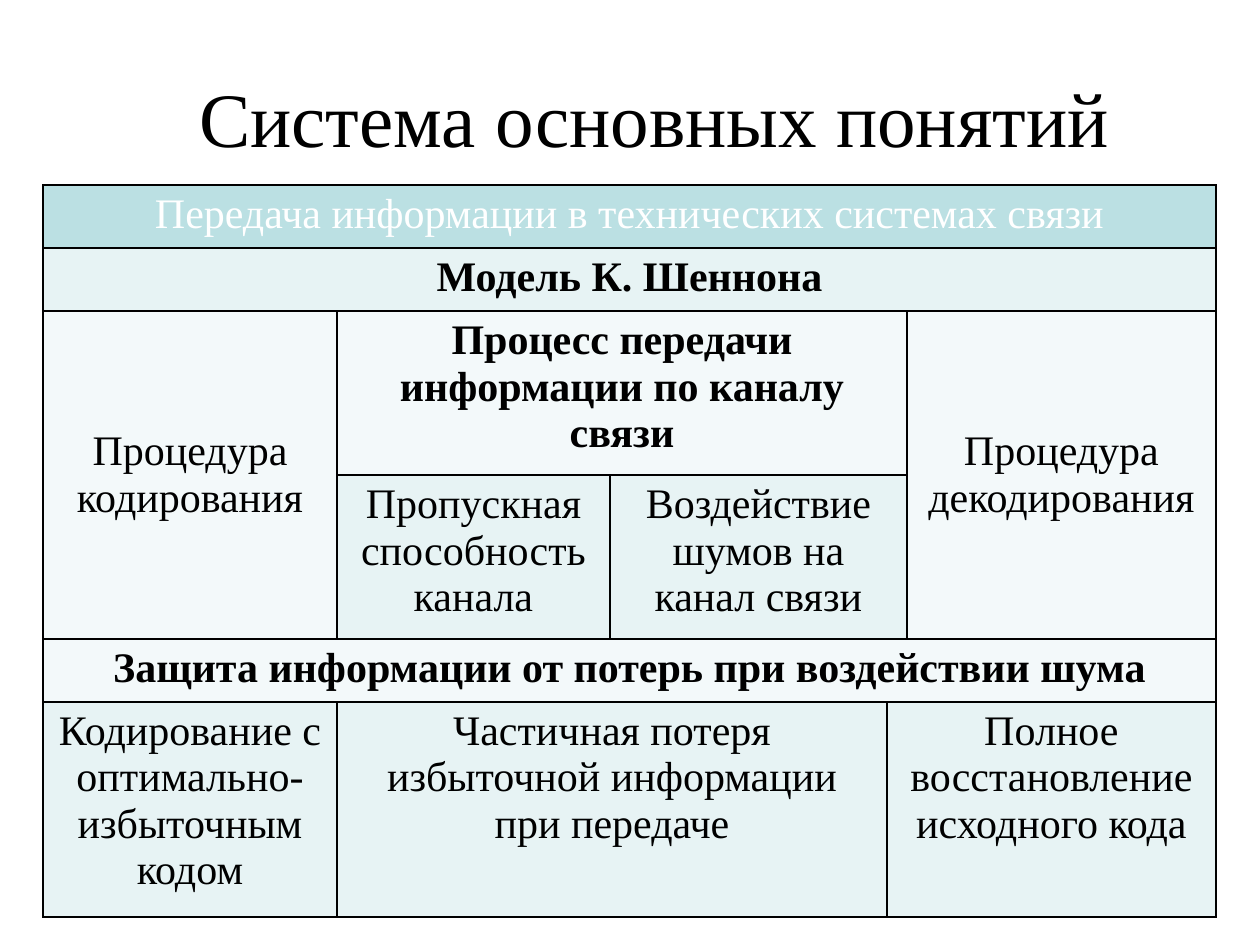
from lxml import etree
from pptx import Presentation
from pptx.dml.color import RGBColor
from pptx.enum.text import MSO_ANCHOR, PP_ALIGN
from pptx.oxml.ns import qn
from pptx.util import Pt

CENTER = PP_ALIGN.CENTER
TOP, MIDDLE = MSO_ANCHOR.TOP, MSO_ANCHOR.MIDDLE
SCALE = 914400 / 126  # EMU in one px
FONT = "Times New Roman"
COLORS = {
    "header": "BBE0E3",
    "tint": "E7F3F4",
    "pale": "F3F9FA",
    "black": "000000",
    "white": "FFFFFF",
}


def px(length):
    return round(length * SCALE)


def write(frame, text, size, color, bold=False):
    frame.word_wrap = True
    para = frame.paragraphs[0]
    para.alignment = CENTER
    span = para.add_run()
    span.text = text
    formats = {"name": FONT, "size": Pt(size), "bold": bold}
    for name, value in formats.items():
        setattr(span.font, name, value)
    span.font.color.rgb = RGBColor.from_string(COLORS[color])
    return para


deck = Presentation()
deck.slide_width, deck.slide_height = px(1260), px(945)
page = deck.slides.add_slide(deck.slide_layouts[6])

# Title, with a first-line indent
box = page.shapes.add_textbox(px(63), px(38), px(1134), px(158))
box.text_frame.vertical_anchor = MIDDLE
para = write(box.text_frame, "Система основных понятий", 44, "black")
para._p.get_or_add_pPr().set("indent", str(px(49)))

# Table grid
widths = [294, 273, 277, 20, 309]
heights = [63, 63, 152, 163, 63, 215]
table = page.shapes.add_table(
    len(heights), len(widths), px(43), px(185), px(sum(widths)), px(sum(heights))
).table
table.horz_banding = False
for column, width in zip(table.columns, widths):
    column.width = px(width)
for row, height in zip(table.rows, heights):
    row.height = px(height)

# Thin black borders around every cell
for cell in table.iter_cells():
    properties = cell._tc.get_or_add_tcPr()
    for side in ("a:lnL", "a:lnR", "a:lnT", "a:lnB"):
        line = etree.SubElement(properties, qn(side), w=str(Pt(1)))
        fill = etree.SubElement(line, qn("a:solidFill"))
        etree.SubElement(fill, qn("a:srgbClr"), val=COLORS["black"])

# Cells: row, column, row span, column span, fill, bold, text
cells = [
    (0, 0, 1, 5, "header", False, "Передача информации в технических системах связи"),
    (1, 0, 1, 5, "tint", True, "Модель К. Шеннона"),
    (2, 0, 2, 1, "pale", False, "Процедура кодирования"),
    (2, 1, 1, 3, "pale", True, "Процесс передачи информации по каналу связи"),
    (2, 4, 2, 1, "pale", False, "Процедура декодирования"),
    (3, 1, 1, 1, "tint", False, "Пропускная способность канала"),
    (3, 2, 1, 2, "tint", False, "Воздействие шумов на канал связи"),
    (4, 0, 1, 5, "pale", True, "Защита информации от потерь при воздействии шума"),
    (5, 0, 1, 1, "tint", False, "Кодирование с оптимально-избыточным кодом"),
    (5, 1, 1, 2, "tint", False, "Частичная потеря избыточной информации при передаче"),
    (5, 3, 1, 2, "tint", False, "Полное восстановление исходного кода"),
]
for row, column, down, across, fill, bold, text in cells:
    cell = table.cell(row, column)
    if down * across > 1:
        cell.merge(table.cell(row + down - 1, column + across - 1))
    cell.fill.solid()
    cell.fill.fore_color.rgb = RGBColor.from_string(COLORS[fill])
    cell.vertical_anchor = MIDDLE if down > 1 else TOP
    write(cell.text_frame, text, 24, "white" if fill == "header" else "black", bold)

deck.save("out.pptx")
